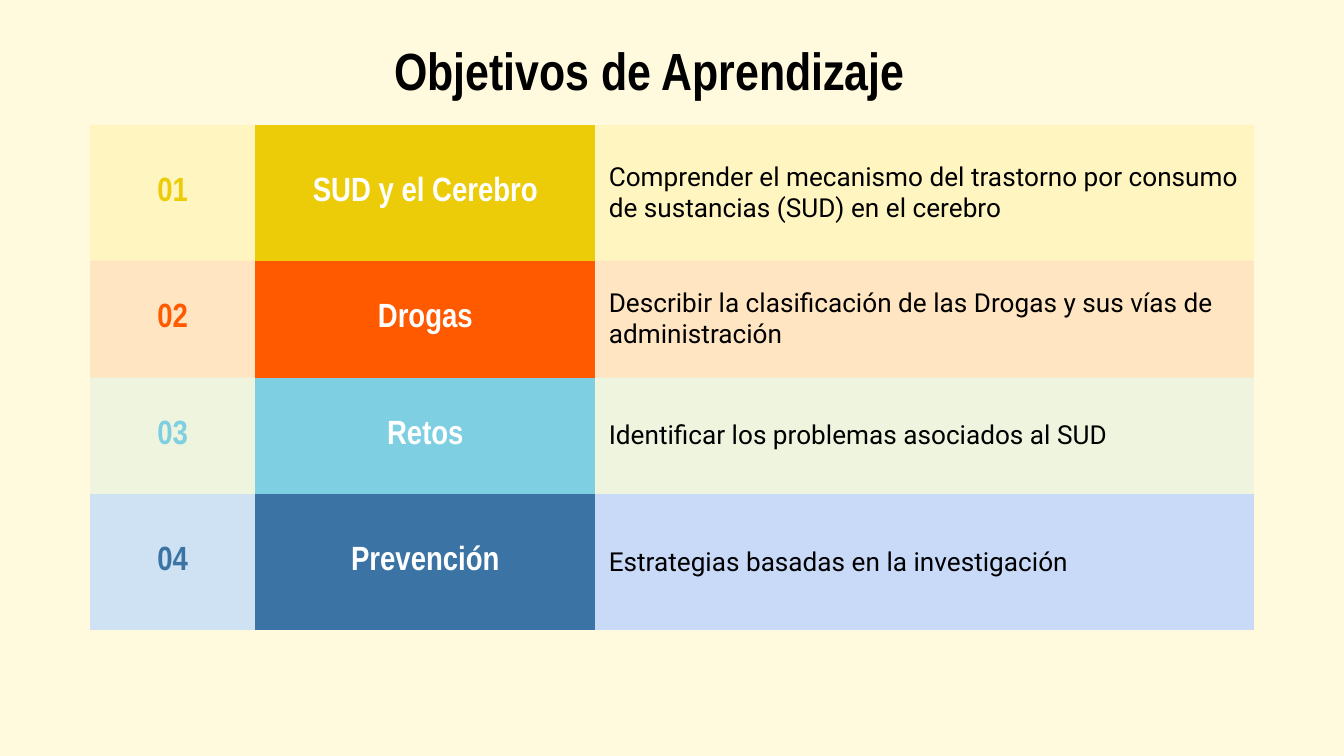
from lxml import etree
from pptx import Presentation
from pptx import util as u
from pptx.dml.color import RGBColor
from pptx.enum import text
from pptx.oxml.ns import qn

HEAD, BODY = "Arial Narrow", "Roboto"
BLACK, WHITE = "000000", "FFFFFF"
BACKGROUND = "FFFADE"
TINT = 13  # opacity of the pale cells, percent


def rgb(value):
    return RGBColor.from_string(value)


def write(tf, words, size=18, font=HEAD, color=BLACK, bold=True,
          align=text.PP_ALIGN.CENTER):
    p = tf.paragraphs[0]
    p.alignment = align
    r = p.add_run()
    r.text = words
    r.font.size = u.Pt(size)
    r.font.name = font
    r.font.bold = bold
    r.font.color.rgb = rgb(color)


class Deck:
    def __init__(self, width):
        self.prs = Presentation()
        self.prs.slide_width = u.Inches(width)
        self.prs.slide_height = u.Inches(width * 9 / 16)
        self.s = None

    def slide(self, color):
        self.s = self.prs.slides.add_slide(self.prs.slide_layouts[5])
        fill = self.s.background.fill
        fill.solid()
        fill.fore_color.rgb = rgb(color)

    def title(self, words, x, y, w, h):
        sp = self.s.shapes.title
        sp.left, sp.top, sp.width, sp.height = map(u.Inches, (x, y, w, h))
        tf = sp.text_frame
        tf.word_wrap = True
        tf.auto_size = text.MSO_AUTO_SIZE.NONE
        tf.vertical_anchor = text.MSO_ANCHOR.MIDDLE
        tf.margin_left = tf.margin_right = u.Inches(0.1)
        tf.margin_top = tf.margin_bottom = u.Inches(0.1)
        write(tf, words, size=28)

    def table(self, x, y, widths, heights):
        frame = self.s.shapes.add_table(
            len(heights), len(widths), u.Inches(x), u.Inches(y),
            u.Inches(sum(widths)), u.Inches(sum(heights)))
        table = frame.table
        table.first_row = table.horz_banding = False
        # "No Style, No Grid" keeps the cells free of borders
        style = frame._element.find(".//" + qn("a:tableStyleId"))
        style.text = "{2D5ABB26-0587-4C30-8999-92F81FD0307C}"
        for column, width in zip(table.columns, widths):
            column.width = u.Inches(width)
        for row, height in zip(table.rows, heights):
            row.height = u.Inches(height)
        return table

    def cell(self, cell, words, fill, opacity=100, **style):
        cell.vertical_anchor = text.MSO_ANCHOR.MIDDLE
        cell.margin_left = cell.margin_right = u.Inches(0.1)
        cell.margin_top = cell.margin_bottom = u.Inches(0.1)
        cell.fill.solid()
        cell.fill.fore_color.rgb = rgb(fill)
        if opacity < 100:
            color = cell._tc.tcPr.find(".//" + qn("a:srgbClr"))
            alpha = etree.SubElement(color, qn("a:alpha"))
            alpha.set("val", str(opacity * 1000))
        write(cell.text_frame, words, **style)


def main():
    deck = Deck(10)
    deck.slide(BACKGROUND)
    deck.title("Objetivos de Aprendizaje", 0.33, 0.31, 9, 0.41)

    # Topic, objective, accent, number fill, objective fill, opacity
    goals = [
        ("SUD y el Cerebro",
         "Comprender el mecanismo del trastorno por consumo de sustancias "
         "(SUD) en el cerebro", "ECCC08", "FFDB00", "FFDB00", TINT),
        ("Drogas",
         "Describir la clasificación de las Drogas y sus vías de "
         "administración", "FF5A00", "FF5A00", "FF5A00", TINT),
        ("Retos", "Identificar los problemas asociados al SUD",
         "7ECFE2", "7ECFE2", "7ECFE2", TINT),
        ("Prevención", "Estrategias basadas en la investigación",
         "3B73A4", "CFE2F3", "C9DAF8", 100),
    ]

    # Table of objectives
    table = deck.table(0.67, 0.93, [1.23, 2.53, 4.9], [1.01, 0.87, 0.87, 1.01])
    for i, (topic, goal, accent, left, right, opacity) in enumerate(goals):
        number_cell, topic_cell, goal_cell = table.rows[i].cells
        deck.cell(number_cell, f"{i + 1:02}", left, opacity, color=accent)
        deck.cell(topic_cell, topic, accent, color=WHITE)
        deck.cell(goal_cell, goal, right, opacity, size=14, font=BODY,
                  bold=False, align=text.PP_ALIGN.LEFT)

    deck.prs.save("out.pptx")


if __name__ == "__main__":
    main()
